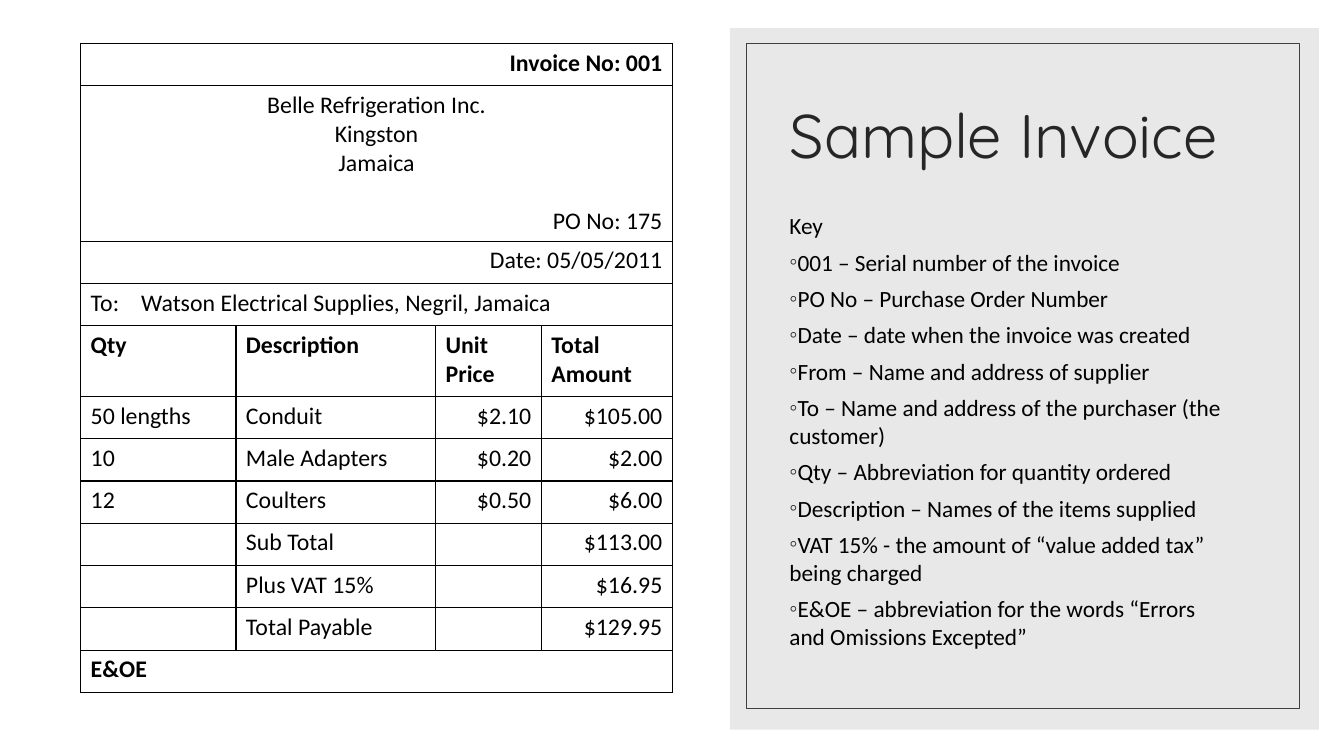
from lxml.etree import SubElement
from pptx import Presentation
from pptx.dml.color import RGBColor
from pptx.enum.shapes import MSO_SHAPE
from pptx.enum.text import MSO_ANCHOR, MSO_AUTO_SIZE, PP_ALIGN
from pptx.oxml import parse_xml
from pptx.oxml.ns import nsdecls, qn
from pptx.util import Inches, Pt

ROW_HEIGHT = 0.42
COLUMN_WIDTHS = [1.54, 1.98, 1.05, 1.3]
LEFT, CENTER, RIGHT = PP_ALIGN.LEFT, PP_ALIGN.CENTER, PP_ALIGN.RIGHT

# A row with one entry spans the whole table.
INVOICE = [
    ["Invoice No: 001"],
    ["Belle Refrigeration Inc.\nKingston\nJamaica\nPO No: 175"],
    ["Date: 05/05/2011"],
    ["To: \tWatson Electrical Supplies, Negril, Jamaica"],
    ["Qty", "Description", "Unit Price", "Total Amount"],
    ["50 lengths", "Conduit", "$2.10", "$105.00"],
    ["10", "Male Adapters", "$0.20", "$2.00"],
    ["12", "Coulters", "$0.50", "$6.00"],
    ["", "Sub Total", "", "$113.00"],
    ["", "Plus VAT 15%", "", "$16.95"],
    ["", "Total Payable", "", "$129.95"],
    ["E&OE"],
]
ADDRESS_ROW, HEADER_ROW = 1, 4
ROW_HEIGHTS = {ADDRESS_ROW: 1.54, HEADER_ROW: 0.7}
BOLD_ROWS = {0, HEADER_ROW, len(INVOICE) - 1}

KEY = [
    "001 – Serial number of the invoice",
    "PO No – Purchase Order Number",
    "Date – date when the invoice was created",
    "From – Name and address of supplier",
    "To – Name and address of the purchaser (the \tcustomer)",
    "Qty – Abbreviation for quantity ordered",
    "Description – Names of the items supplied",
    "VAT 15% - the amount of “value added tax” \tbeing charged",
    "E&OE – abbreviation for the words “Errors \tand Omissions Excepted”",
]


def color(hex_text):
    return RGBColor.from_string(hex_text)


class InvoiceSlide:
    body_font = "Calibri"
    title_font = "Quicksand"
    black, ink, frame_line = "000000", "262626", "404040"

    def __init__(self, deck):
        self.page = deck.slides.add_slide(deck.slide_layouts[1])

    def rectangle(self, left, top, width, height, fill=None, line=None, opacity=100):
        box = self.page.shapes.add_shape(
            MSO_SHAPE.RECTANGLE, Inches(left), Inches(top), Inches(width), Inches(height))
        box.shadow.inherit = False
        if fill:
            box.fill.solid()
            box.fill.fore_color.rgb = color(fill)
            if opacity < 100:
                fill_color = box.fill._xPr.find(qn("a:solidFill"))[0]
                SubElement(fill_color, qn("a:alpha"), val=str(opacity * 1000))
        else:
            box.fill.background()
        if line:
            box.line.color.rgb = color(line)
            box.line.width = Pt(0.5)
        else:
            box.line.fill.background()

    def style(self, para, size, font, ink, bold=False):
        para.font.size = Pt(size)
        para.font.name = font
        para.font.bold = bold
        para.font.color.rgb = color(ink)

    def place(self, holder, left, top, width, height, anchor):
        """Position a placeholder above everything drawn so far."""
        holder.left, holder.top = Inches(left), Inches(top)
        holder.width, holder.height = Inches(width), Inches(height)
        frame = holder.text_frame
        frame.word_wrap = True
        frame.auto_size = MSO_AUTO_SIZE.NONE
        frame.vertical_anchor = anchor
        self.page.shapes._spTree.append(holder._element)
        return frame

    def title(self, text, *position):
        frame = self.place(self.page.shapes.title, *position, MSO_ANCHOR.MIDDLE)
        frame.text = text
        para = frame.paragraphs[0]
        para.alignment = LEFT
        para.line_spacing = 0.9
        self.style(para, 44, self.title_font, self.ink)

    def key_list(self, heading, items, *position):
        frame = self.place(self.page.placeholders[1], *position, MSO_ANCHOR.TOP)
        frame.text = "\n".join([heading, *items])
        for index, para in enumerate(frame.paragraphs):
            para.alignment = LEFT
            para.line_spacing = 1.0
            para.space_before, para.space_after = Pt(0), Pt(6)
            self.bullet(para, "◦" if index else None)
            self.style(para, 16.6, self.body_font, self.black)

    def bullet(self, para, mark):
        properties = para._p.get_or_add_pPr()
        properties.set("marL", "0")
        properties.set("indent", str(-Inches(0.2) if mark else 0))
        if mark:
            bullet_color = SubElement(properties, qn("a:buClr"))
            SubElement(bullet_color, qn("a:srgbClr"), val=self.ink)
            SubElement(properties, qn("a:buChar"), char=mark)
        else:
            SubElement(properties, qn("a:buNone"))

    def cell_borders(self, cell):
        properties = cell._tc.get_or_add_tcPr()
        for index, side in enumerate(["lnL", "lnR", "lnT", "lnB"]):
            properties.insert(index, parse_xml(
                f'<a:{side} {nsdecls("a")} w="{Pt(1)}"><a:solidFill>'
                f'<a:srgbClr val="{self.black}"/></a:solidFill></a:{side}>'))

    def invoice_table(self, left, top):
        heights = [ROW_HEIGHTS.get(row, ROW_HEIGHT) for row in range(len(INVOICE))]
        table = self.page.shapes.add_table(
            len(INVOICE), len(COLUMN_WIDTHS), Inches(left), Inches(top),
            Inches(sum(COLUMN_WIDTHS)), Inches(sum(heights))).table
        table.first_row = table.horz_banding = False
        for column, width in zip(table.columns, COLUMN_WIDTHS):
            column.width = Inches(width)
        for row_index, (texts, height) in enumerate(zip(INVOICE, heights)):
            table.rows[row_index].height = Inches(height)
            for column_index in range(len(COLUMN_WIDTHS)):
                cell = table.cell(row_index, column_index)
                cell.fill.background()
                self.cell_borders(cell)
            if len(texts) == 1:
                table.cell(row_index, 0).merge(cell)
            for column_index, text in enumerate(texts):
                cell = table.cell(row_index, column_index)
                cell.text = text
                for para in cell.text_frame.paragraphs:
                    para.alignment = self.cell_alignment(row_index, column_index, para.text)
                    self.style(para, 17, self.body_font, self.black, row_index in BOLD_ROWS)
        order_number = table.cell(ADDRESS_ROW, 0).text_frame.paragraphs[-1]
        order_number.space_before = Pt(20.75)

    def cell_alignment(self, row, column, text):
        if text.startswith(("Invoice No", "PO No", "Date")):
            return RIGHT
        if row == ADDRESS_ROW:
            return CENTER
        return RIGHT if row > HEADER_ROW and column >= 2 else LEFT


def main():
    deck = Presentation()
    deck.slide_width, deck.slide_height = Inches(13.33), Inches(7.5)
    slide = InvoiceSlide(deck)
    slide.rectangle(0, 0, 13.33, 7.5, fill="FFFFFF")
    slide.rectangle(7.24, 0.28, 5.84, 6.96, fill="D9D9D9", opacity=60)
    slide.rectangle(7.4, 0.43, 5.49, 6.6, line=slide.frame_line)
    slide.title("Sample Invoice", 7.73, 0.7, 4.89, 1.34)
    slide.key_list("Key", KEY, 7.73, 2.05, 4.89, 4.55)
    slide.invoice_table(0.8, 0.43)
    deck.save("out.pptx")


if __name__ == "__main__":
    main()
